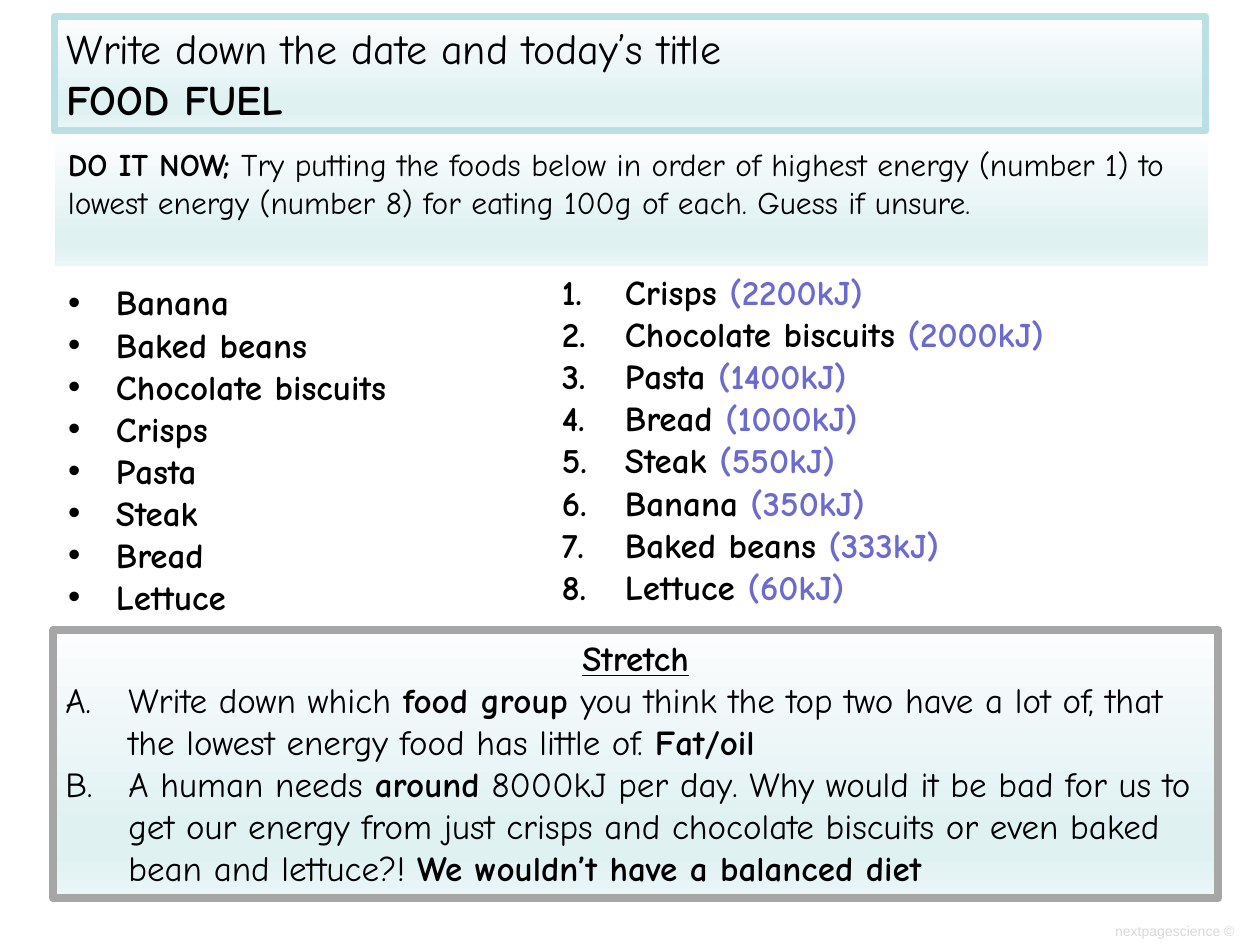
from lxml.etree import SubElement
from pptx import Presentation
from pptx.dml.color import RGBColor
from pptx.enum.shapes import MSO_SHAPE
from pptx.enum.text import MSO_ANCHOR, MSO_AUTO_SIZE, PP_ALIGN
from pptx.oxml.ns import qn
from pptx.util import Inches, Pt

BLACK = RGBColor(0x00, 0x00, 0x00)
AQUA = RGBColor(0xBB, 0xE0, 0xE3)
GREY = RGBColor(0xA6, 0xA6, 0xA6)
PALE_GREY = RGBColor(0xD9, 0xD9, 0xD9)
VIOLET = RGBColor(0x6B, 0x6B, 0xCF)
GRADIENT = [
    (0, RGBColor(0xFC, 0xFD, 0xFE)),
    (74, RGBColor(0xE0, 0xF1, 0xF2)),
    (83, RGBColor(0xE0, 0xF1, 0xF2)),
    (100, RGBColor(0xEB, 0xF6, 0xF7)),
]

# A paragraph is a list of runs: (text, bold, colour)
HEADING = [
    [("Write down the date and today’s title", False, BLACK)],
    [("FOOD FUEL", True, BLACK)],
]
TASK = [[
    ("DO IT NOW; ", True, BLACK),
    ("Try putting the foods below in order of highest energy (number 1) to lowest "
     "energy (number 8) for eating 100g of each. Guess if unsure.", False, BLACK),
]]
FOODS = ["Banana", "Baked beans", "Chocolate biscuits", "Crisps",
         "Pasta", "Steak", "Bread", "Lettuce"]
RANKING = [("Crisps", 2200), ("Chocolate biscuits", 2000), ("Pasta", 1400),
           ("Bread", 1000), ("Steak", 550), ("Banana", 350),
           ("Baked beans", 333), ("Lettuce", 60)]
STRETCH_HEADING = "Stretch"
QUESTIONS = [
    [("Write down which ", False, BLACK), ("food group ", True, BLACK),
     ("you think the top two have a lot of, that the lowest energy food has "
      "little of. ", False, BLACK),
     ("Fat/oil", True, BLACK)],
    [("A human needs ", False, BLACK), ("around", True, BLACK),
     (" 8000kJ per day. Why would it be bad for us to get our energy from just "
      "crisps and chocolate biscuits or even baked bean and lettuce?! ", False, BLACK),
     ("We wouldn’t have a balanced diet", True, BLACK)],
]
CREDIT = "nextpagescience ©"


def place(shape, left, top, width, height):
    shape.left, shape.top = Inches(left), Inches(top)
    shape.width, shape.height = Inches(width), Inches(height)
    frame = shape.text_frame
    frame.word_wrap = True
    frame.auto_size = MSO_AUTO_SIZE.NONE
    frame.vertical_anchor = MSO_ANCHOR.TOP
    return frame


def paint(shape, line_colour=None, line_width=0):
    """Fill with the vertical gradient and set the border, if any."""
    shape.fill.gradient()
    shape.fill.gradient_angle = 270
    stops = shape._element.spPr.find(qn("a:gradFill")).find(qn("a:gsLst"))
    for stop in list(stops):
        stops.remove(stop)
    for percent, colour in GRADIENT:
        stop = SubElement(stops, qn("a:gs"), pos=str(percent * 1000))
        SubElement(stop, qn("a:srgbClr"), val=str(colour))
    if line_colour is None:
        shape.line.fill.background()
    else:
        shape.line.color.rgb = line_colour
        shape.line.width = Pt(line_width)


def add_panel(slide, *box):
    panel = slide.shapes.add_shape(MSO_SHAPE.RECTANGLE, *map(Inches, box))
    panel.shadow.inherit = False
    return panel, place(panel, *box)


def set_marker(paragraph, indent, tag, **attributes):
    """Give a paragraph a hanging indent and a bullet or automatic number."""
    properties = paragraph._p.get_or_add_pPr()
    properties.set("marL", str(Inches(indent)))
    properties.set("indent", str(-Inches(indent)))
    SubElement(properties, qn("a:buFont"), typeface="Arial" if tag == "a:buChar" else "+mj-lt")
    SubElement(properties, qn(tag), **attributes)


def write(frame, paragraphs, size, marker=None, align=PP_ALIGN.LEFT, font="Comic Neue"):
    for runs in paragraphs:
        paragraph = frame.paragraphs[0]
        if paragraph.runs:
            paragraph = frame.add_paragraph()
        if marker:
            indent, tag, attributes = marker
            set_marker(paragraph, indent, tag, **attributes)
        paragraph.alignment = align
        paragraph.space_before = Pt(0)
        paragraph.font.name = font
        paragraph.font.size = Pt(size)
        paragraph.font.color.rgb = BLACK
        for text, bold, colour in runs:
            run = paragraph.add_run()
            run.text = text
            run.font.bold = bold
            if colour != BLACK:
                run.font.color.rgb = colour


def main():
    deck = Presentation()
    deck.slide_width, deck.slide_height = Inches(10), Inches(7.5)
    slide = deck.slides.add_slide(deck.slide_layouts.get_by_name("Two Content"))
    title, food_list, ranking_list = list(slide.placeholders)[:3]

    write(place(title, 0.43, 0.13, 9.14, 0.91), HEADING, 24)
    paint(title, AQUA, 4)

    task, task_frame = add_panel(slide, 0.44, 1.1, 9.15, 1.01)
    paint(task)
    write(task_frame, TASK, 18)

    write(place(food_list, 0.44, 2.18, 3.22, 2.79),
          [[(food, True, BLACK)] for food in FOODS], 20,
          (0.38, "a:buChar", {"char": "•"}))
    write(place(ranking_list, 4.36, 2.1, 4.89, 2.79),
          [[(f"{food} ", True, BLACK), (f"({energy}kJ)", True, VIOLET)]
           for food, energy in RANKING], 20,
          (0.5, "a:buAutoNum", {"type": "arabicPeriod"}))

    stretch, stretch_frame = add_panel(slide, 0.42, 5, 9.25, 2.13)
    paint(stretch, GREY, 4.5)
    write(stretch_frame, [[(STRETCH_HEADING, True, BLACK)]], 20, align=PP_ALIGN.CENTER)
    stretch_frame.paragraphs[0].runs[0].font.underline = True
    write(stretch_frame, QUESTIONS, 20, (0.5, "a:buAutoNum", {"type": "alphaUcPeriod"}))

    credit_box = (8.65, 7.27, 1.35, 0.23)
    credit = slide.shapes.add_textbox(*map(Inches, credit_box))
    write(place(credit, *credit_box), [[(CREDIT, False, PALE_GREY)]], 8,
          align=PP_ALIGN.CENTER, font="Arial")

    deck.save("out.pptx")


if __name__ == "__main__":
    main()
